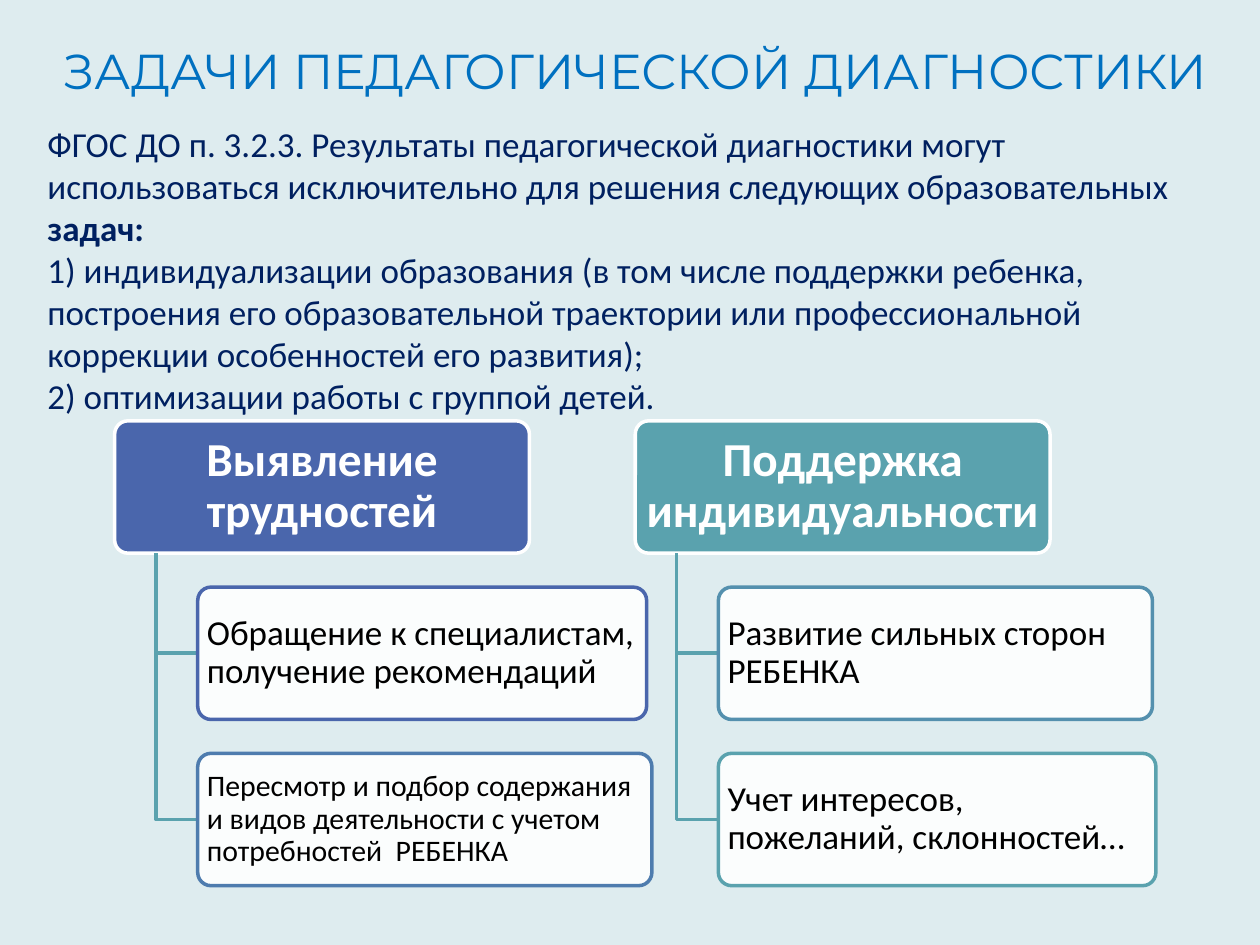
from lxml import etree
from pptx import Presentation
from pptx.dml.color import RGBColor
from pptx.enum.shapes import MSO_SHAPE
from pptx.enum.text import MSO_ANCHOR, PP_ALIGN
from pptx.oxml.ns import qn
from pptx.util import Pt


def color(value):
    return RGBColor.from_string(value)


def add_card(left, top, width, text, size, fill, line, heading=False):
    card = slide.shapes.add_shape(
        MSO_SHAPE.ROUNDED_RECTANGLE, Pt(left), Pt(top), Pt(width), Pt(CARD_HEIGHT))
    card.adjustments[0] = 0.1
    card.shadow.inherit = False
    card.fill.solid()
    card.fill.fore_color.rgb = color(fill)
    card.line.color.rgb = color(line)
    card.line.width = Pt(2)
    frame = card.text_frame
    frame.word_wrap = True
    frame.vertical_anchor = MSO_ANCHOR.MIDDLE
    frame.margin_left = frame.margin_right = Pt(4 if heading else 3)
    frame.margin_top = frame.margin_bottom = Pt(2)
    para = frame.paragraphs[0]
    para.text = text
    para.alignment = PP_ALIGN.CENTER if heading else PP_ALIGN.LEFT
    para.line_spacing = 0.9
    para.font.name = "Calibri"
    para.font.size = Pt(size)
    para.font.bold = heading
    para.font.color.rgb = color("FFFFFF" if heading else "000000")
    return card


CARD_HEIGHT = 75.6
CARD_STEP = 95
HEADING_TOP = 240.5
HEADING_WIDTH = 237
STEM_OFFSET = 23.7
CHILD_OFFSET = 47.5
TEAL = "5AA2AE"

deck = Presentation()
deck.slide_width, deck.slide_height = Pt(720), Pt(540)
slide = deck.slides.add_slide(deck.slide_layouts[5])
slide.background.fill.solid()
slide.background.fill.fore_color.rgb = color("DEECEF")

title = slide.shapes.title
title.left, title.top, title.width, title.height = Pt(20), Pt(10), Pt(686), Pt(60)
title.text_frame.vertical_anchor = MSO_ANCHOR.MIDDLE
para = title.text_frame.paragraphs[0]
para.text = "ЗАДАЧИ ПЕДАГОГИЧЕСКОЙ ДИАГНОСТИКИ"
para.alignment = PP_ALIGN.CENTER
para.font.name = "Montserrat"
para.font.size = Pt(28)
para.font.color.rgb = color("0070C0")

branches = [
    (65.5, "Выявление трудностей", "4A66AC", [
        ("Обращение к специалистам, получение рекомендаций", 20, 256.5, "4A66AC"),
        ("Пересмотр и подбор содержания и видов деятельности с учетом "
         "потребностей  РЕБЕНКА", 17, 259.5, "4E7CAE"),
    ]),
    (363, "Поддержка индивидуальности", TEAL, [
        ("Развитие сильных сторон РЕБЕНКА", 20, 248, "5490AE"),
        ("Учет интересов, пожеланий, склонностей…", 20, 250, TEAL),
    ]),
]
for left, heading, fill, children in branches:
    add_card(left, HEADING_TOP, HEADING_WIDTH, heading, 27, fill, "FFFFFF", heading=True)
    stem_left = left + STEM_OFFSET
    stem_top = HEADING_TOP + CARD_HEIGHT
    child_left = left + CHILD_OFFSET
    for row, (text, size, width, line) in enumerate(children, start=1):
        top = HEADING_TOP + row * CARD_STEP
        middle = top + CARD_HEIGHT / 2
        builder = slide.shapes.build_freeform(Pt(stem_left), Pt(stem_top))
        builder.add_line_segments(
            [(Pt(stem_left), Pt(middle)), (Pt(child_left), Pt(middle))], close=False)
        elbow = builder.convert_to_shape()
        elbow.shadow.inherit = False
        elbow.fill.background()
        elbow.line.color.rgb = color(TEAL)
        elbow.line.width = Pt(2)
        card = add_card(child_left, top, width, text, size, "FFFFFF", line)
        fill_color = card.fill._xPr.find(qn("a:solidFill"))[0]
        etree.SubElement(fill_color, qn("a:alpha"), val="90000")

intro = slide.shapes.add_textbox(Pt(20), Pt(66.5), Pt(700), Pt(177))
frame = intro.text_frame
frame.word_wrap = True
frame.margin_right = Pt(21)
intro_lines = [
    [("ФГОС ДО п. 3.2.3. Результаты педагогической диагностики могут "
      "использоваться исключительно для решения следующих образовательных ", False),
     ("задач:", True)],
    [("1) индивидуализации образования (в том числе поддержки ребенка, построения "
      "его образовательной траектории или профессиональной коррекции особенностей "
      "его развития);", False)],
    [("2) оптимизации работы с группой детей.", False)],
]
for index, spans in enumerate(intro_lines):
    para = frame.add_paragraph() if index else frame.paragraphs[0]
    para.font.name = "Calibri"
    para.font.size = Pt(20)
    para.font.color.rgb = color("002060")
    for text, bold in spans:
        span = para.add_run()
        span.text = text
        if bold:
            span.font.bold = True

deck.save("out.pptx")
